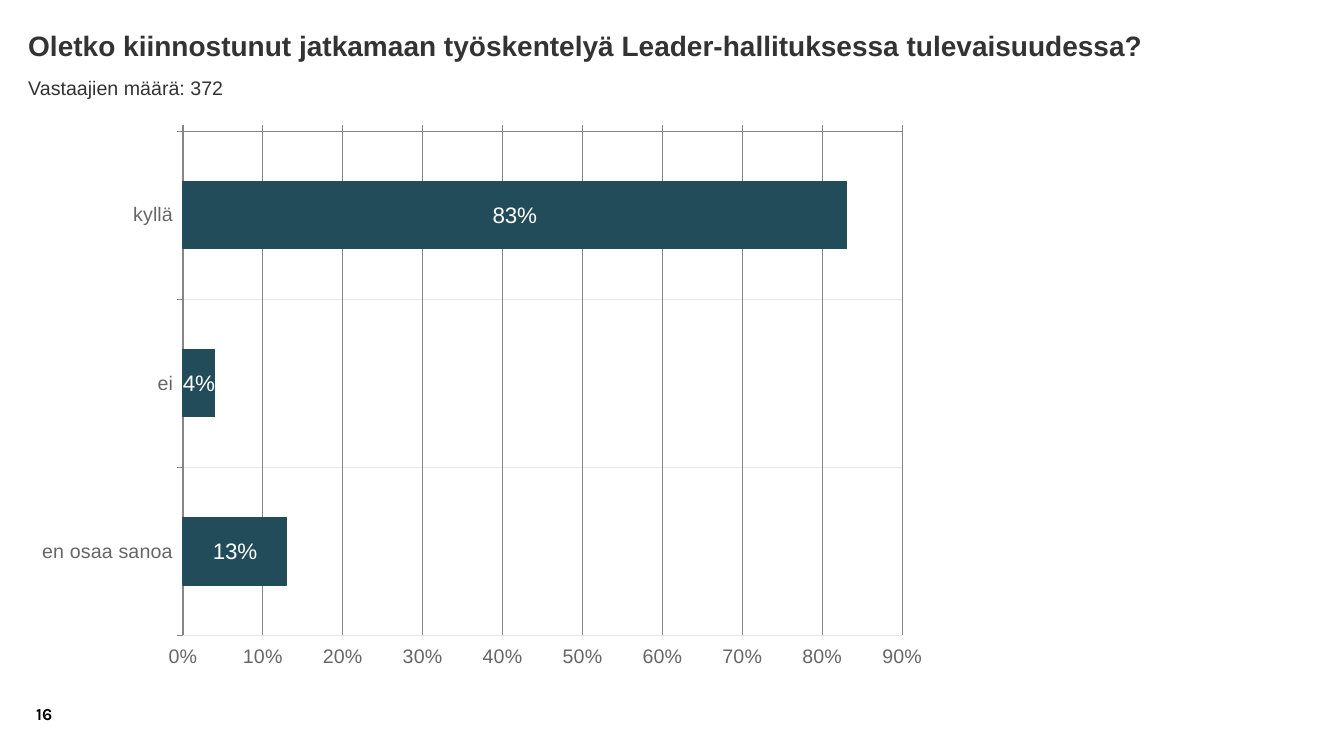
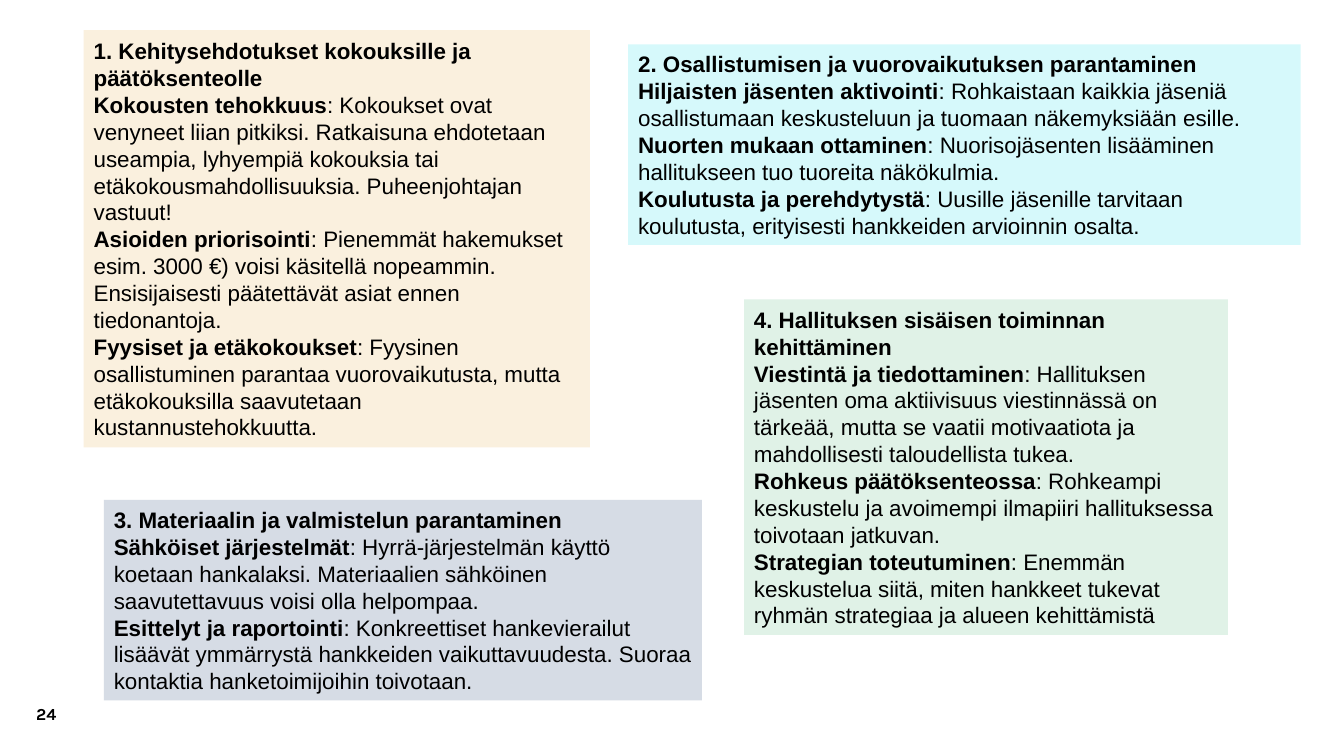
import pptx
import pptx.util
import pptx.oxml
import pptx.chart.data
import pptx.dml.color
import pptx.enum.chart
import pptx.enum.shapes
import pptx.enum.text

WIDE, HIGH = pptx.util.Inches(13.33), pptx.util.Inches(7.5)
FACE = "Arial"
INK, BLACK, WHITE = "333333", "000000", "FFFFFF"
BAR, LABEL, GRID, PALE = "234C5A", "666666", "868686", "E6E6E6"

HEAD = (2.1, 3.73, 95.87, 4.53)
SUB = (2.1, 10, 95.87, 3.07)
PLOT = (2.1, 15.87, 67.74, 74.13)
PAGE = (1.95, 92.4, 6.53, 4)

VOTES = {"kyllä": 0.83, "ei": 0.04, "en osaa sanoa": 0.13}

CARDS = [
    ((6.23, 4, 37.66, 55.2), "FAF0DE",
     "1. Kehitysehdotukset kokouksille ja päätöksenteolle", [
         ("Kokousten tehokkuus",
          "Kokoukset ovat venyneet liian pitkiksi. Ratkaisuna ehdotetaan useampia, "
          "lyhyempiä kokouksia tai etäkokousmahdollisuuksia. Puheenjohtajan vastuut!"),
         ("Asioiden priorisointi",
          "Pienemmät hakemukset esim. 3000 €) voisi käsitellä nopeammin. "
          "Ensisijaisesti päätettävät asiat ennen tiedonantoja."),
         ("Fyysiset ja etäkokoukset",
          "Fyysinen osallistuminen parantaa vuorovaikutusta, mutta "
          "etäkokouksilla saavutetaan kustannustehokkuutta.")]),
    ((46.74, 5.87, 50.04, 26.53), "D6F9FB",
     "2. Osallistumisen ja vuorovaikutuksen parantaminen", [
         ("Hiljaisten jäsenten aktivointi",
          "Rohkaistaan kaikkia jäseniä osallistumaan keskusteluun "
          "ja tuomaan näkemyksiään esille."),
         ("Nuorten mukaan ottaminen",
          "Nuorisojäsenten lisääminen hallitukseen tuo tuoreita näkökulmia."),
         ("Koulutusta ja perehdytystä",
          "Uusille jäsenille tarvitaan koulutusta, "
          "erityisesti hankkeiden arvioinnin osalta.")]),
    ((7.73, 66.13, 44.49, 26.53), "D6DCE5",
     "3. Materiaalin ja valmistelun parantaminen", [
         ("Sähköiset järjestelmät",
          "Hyrrä-järjestelmän käyttö koetaan hankalaksi. "
          "Materiaalien sähköinen saavutettavuus voisi olla helpompaa."),
         ("Esittelyt ja raportointi",
          "Konkreettiset hankevierailut lisäävät ymmärrystä hankkeiden "
          "vaikuttavuudesta. Suoraa kontaktia hanketoimijoihin toivotaan.")]),
    ((55.36, 39.6, 36.01, 44.4), "E0F2E7",
     "4. Hallituksen sisäisen toiminnan kehittäminen", [
         ("Viestintä ja tiedottaminen",
          "Hallituksen jäsenten oma aktiivisuus viestinnässä on tärkeää, mutta se "
          "vaatii motivaatiota ja mahdollisesti taloudellista tukea."),
         ("Rohkeus päätöksenteossa",
          "Rohkeampi keskustelu ja avoimempi ilmapiiri hallituksessa toivotaan jatkuvan."),
         ("Strategian toteutuminen",
          "Enemmän keskustelua siitä, miten hankkeet tukevat "
          "ryhmän strategiaa ja alueen kehittämistä")]),
]


def tint(code):
    """Turn a hex string into a colour."""
    return pptx.dml.color.RGBColor.from_string(code)


def span(box):
    """Turn percentages of the slide into left, top, width and height."""
    return [round(share * side / 100) for share, side in zip(box, (WIDE, HIGH) * 2)]


def style(font, size, code, bold=False, face=FACE):
    """Set the look of a font."""
    font.name, font.size, font.bold = face, pptx.util.Pt(size), bold
    font.color.rgb = tint(code)


def stroke(line, code):
    """Draw a thin solid line."""
    line.color.rgb = tint(code)
    line.width = pptx.util.Pt(0.75)


def write(shape, text, size, code, bold=False, face=FACE, inset=0):
    """Fill a text shape with one top-left line."""
    frame = shape.text_frame
    frame.word_wrap = True
    frame.auto_size = pptx.enum.text.MSO_AUTO_SIZE.NONE
    frame.vertical_anchor = pptx.enum.text.MSO_ANCHOR.TOP
    frame.margin_left = frame.margin_right = pptx.util.Inches(inset)
    frame.margin_top = frame.margin_bottom = pptx.util.Inches(inset / 2)
    frame.text = text
    line = frame.paragraphs[0]
    line.alignment = pptx.enum.text.PP_ALIGN.LEFT
    style(line.font, size, code, bold, face)


def start(deck, kind, page):
    """Add a slide with its page number."""
    slide = deck.slides.add_slide(deck.slide_layouts.get_by_name(kind))
    write(slide.shapes.add_textbox(*span(PAGE)), page, 12, BLACK, True, "Karla", 0.1)
    return slide


def frame_plot(chart, x, y, w, h):
    """Fix the inner plot area as shares of the chart."""
    area = chart._chartSpace.chart.plotArea
    for old in area.findall(pptx.oxml.ns.qn("c:layout")):
        area.remove(old)
    parts = "".join(f'<c:{tag} val="{val}"/>' for tag, val in (
        ("layoutTarget", "inner"), ("xMode", "edge"), ("yMode", "edge"),
        ("x", x), ("y", y), ("w", w), ("h", h)))
    area.insert(0, pptx.oxml.parse_xml(
        f'<c:layout {pptx.oxml.ns.nsdecls("c")}>'
        f'<c:manualLayout>{parts}</c:manualLayout></c:layout>'))


def draw_bars(slide, box, votes):
    """Add the bar chart of answers."""
    enum = pptx.enum.chart
    data = pptx.chart.data.CategoryChartData(number_format="0%")
    data.categories = list(votes)
    data.add_series("Series 1", list(votes.values()))
    chart = slide.shapes.add_chart(enum.XL_CHART_TYPE.BAR_CLUSTERED, *span(box), data).chart
    chart.has_legend = chart.has_title = False
    style(chart.font, 14, BLACK)
    cat, val = chart.category_axis, chart.value_axis
    for axis, code in ((cat, PALE), (val, GRID)):
        axis.has_major_gridlines = True
        stroke(axis.major_gridlines.format.line, code)
        stroke(axis.format.line, GRID)
        axis.major_tick_mark = enum.XL_TICK_MARK.OUTSIDE
        axis.minor_tick_mark = enum.XL_TICK_MARK.NONE
        style(axis.tick_labels.font, 14, LABEL)
    cat.reverse_order = True
    cat.tick_label_position = enum.XL_TICK_LABEL_POSITION.LOW
    val.tick_label_position = enum.XL_TICK_LABEL_POSITION.HIGH
    val.minimum_scale, val.maximum_scale, val.major_unit = 0, 0.9, 0.1
    val.tick_labels.number_format = "0%"
    val.tick_labels.number_format_is_linked = False
    plot = chart.plots[0]
    plot.gap_width, plot.vary_by_categories = 150, False
    bars = plot.series[0].format
    bars.fill.solid()
    bars.fill.fore_color.rgb = tint(BAR)
    stroke(bars.line, BAR)
    plot.has_data_labels = True
    marks = plot.data_labels
    marks.show_value = True
    marks.number_format, marks.number_format_is_linked = "0%", False
    marks.position = enum.XL_LABEL_POSITION.CENTER
    style(marks.font, 16, WHITE)
    frame_plot(chart, 0.17, 0.02, 0.79, 0.9)


def draw_card(slide, box, code, head, points):
    """Add a filled card with a heading and its points."""
    card = slide.shapes.add_shape(pptx.enum.shapes.MSO_SHAPE.RECTANGLE, *span(box))
    card.shadow.inherit = False
    card.fill.solid()
    card.fill.fore_color.rgb = tint(code)
    card.line.fill.background()
    frame = card.text_frame
    frame.word_wrap = True
    frame.vertical_anchor = pptx.enum.text.MSO_ANCHOR.MIDDLE
    for row, (lead, rest) in enumerate([(head, ""), *points]):
        para = frame.add_paragraph() if row else frame.paragraphs[0]
        para.alignment = pptx.enum.text.PP_ALIGN.LEFT
        style(para.font, 16, BLACK, not rest)
        run = para.add_run()
        run.text = lead
        if rest:
            run.font.bold = True
            para.add_run().text = f": {rest}"


def chart_slide(deck):
    """Build the slide with the survey question."""
    slide = start(deck, "Title Only", "16")
    title = slide.shapes.title
    title.left, title.top, title.width, title.height = span(HEAD)
    write(title, "Oletko kiinnostunut jatkamaan työskentelyä "
          "Leader-hallituksessa tulevaisuudessa?", 20, INK, True)
    write(slide.shapes.add_textbox(*span(SUB)), "Vastaajien määrä: 372", 14, INK)
    draw_bars(slide, PLOT, VOTES)


def card_slide(deck):
    """Build the slide with the four themes."""
    slide = start(deck, "Blank", "24")
    for card in CARDS:
        draw_card(slide, *card)


def main():
    """Build and save the deck."""
    deck = pptx.Presentation()
    deck.slide_width, deck.slide_height = WIDE, HIGH
    chart_slide(deck)
    card_slide(deck)
    deck.save("out.pptx")


if __name__ == "__main__":
    main()
